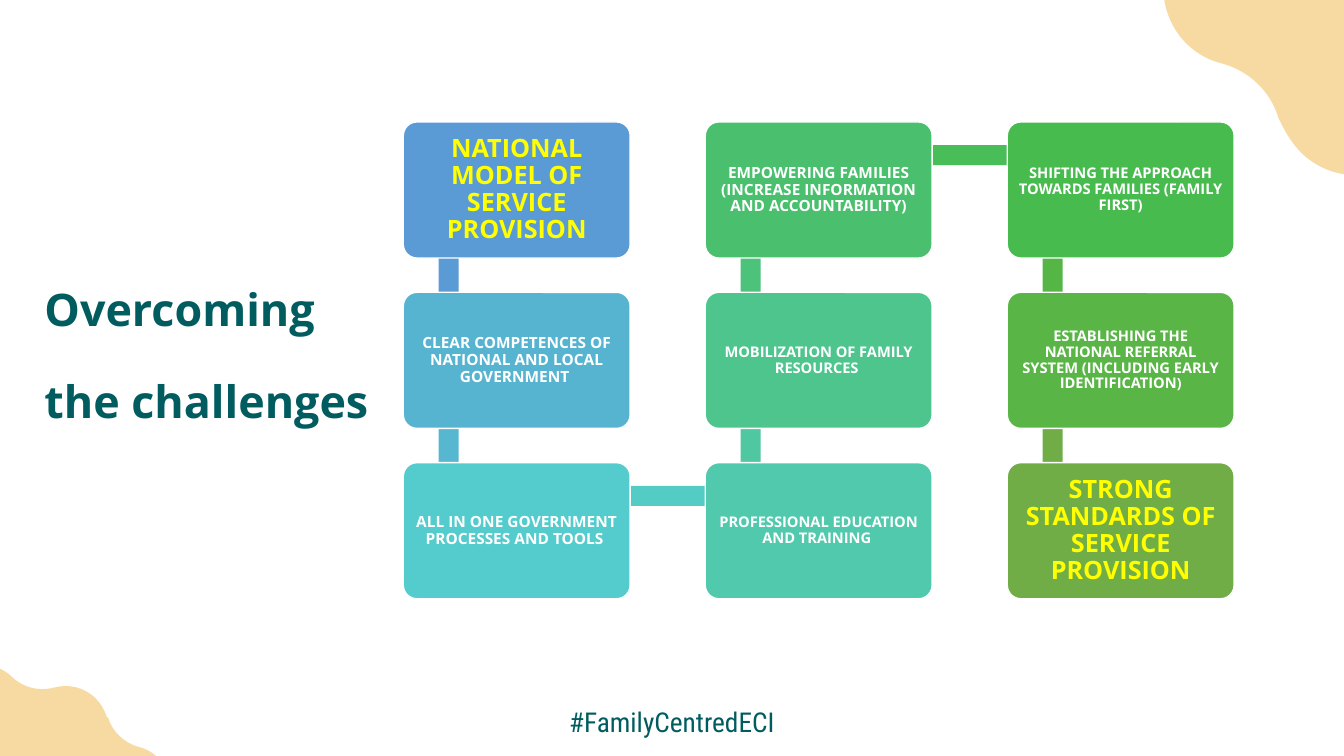
from lxml import etree
from pptx import Presentation
from pptx.dml.color import RGBColor
from pptx.enum.shapes import MSO_SHAPE
from pptx.enum.text import MSO_ANCHOR, PP_ALIGN
from pptx.oxml.ns import qn
from pptx.util import Inches, Pt

RECTANGLE = MSO_SHAPE.RECTANGLE
ROUNDED_RECTANGLE = MSO_SHAPE.ROUNDED_RECTANGLE
MIDDLE = MSO_ANCHOR.MIDDLE
LEFT = PP_ALIGN.LEFT
CENTER = PP_ALIGN.CENTER

COLORS = {"teal": "015C60", "sand": "F0B238", "white": "FFFFFF", "yellow": "FFFF00"}
HEADING_FONT = "Open Sans"
HASHTAG_FONT = "Roboto Condensed"

ROWS = 3
COLUMNS = 3
CARD_WIDTH = 2.25
CARD_HEIGHT = 1.35
BAR_THICKNESS = 0.2

STEPS = [
    ([("NATIONAL MODEL OF SERVICE PROVISION", 18)], "yellow", "5B9BD5", "5B9BD5"),
    ([("CLEAR COMPETENCES OF NATIONAL AND LOCAL GOVERNMENT ", 11)], "white", "57B4D1", "57B7D1"),
    ([("ALL IN ONE GOVERNMENT PROCESSES AND TOOLS ", 11)], "white", "54CCCD", "53CCC5"),
    ([("PROFESSIONAL EDUCATION AND TRAINING ", 10.5)], "white", "51C9AD", "4FC7A0"),
    ([("MOBILIZATION OF FAMILY RESOURCES ", 10.5)], "white", "4DC58D", "4CC27B"),
    ([("EMPOWERING FAMILIES (INCREASE INFORMATION AND ACCOUNTABILITY)", 11)],
     "white", "4AC06E", "48BD58"),
    ([("SHIFTING THE APPROACH TOWARDS FAMILIES (FAMILY FIRST)", 10.5)],
     "white", "48BB4F", "55B646"),
    ([("ESTABLISHING THE NATIONAL REFERRAL SYSTEM (INCLUDING EARLY IDENTIFICATION", 10.5),
      (")", 10)], "white", "59B546", "70AD47"),
    ([("STRONG STANDARDS OF SERVICE PROVISION", 18)], "yellow", "70AD47", None),
]

BLOB_SPAN = 7.57
BLOB_START = (2.2, -2.83)
BLOB_HALF = [
    ((2.16, -2.96), (2.09, -3.08), (1.99, -3.18)),
    ((1.78, -3.38), (1.5, -3.44), (1.24, -3.37)),
    ((0.98, -3.3), (0.69, -3.36), (0.48, -3.56)),
    ((0.18, -3.86), (-0.32, -3.85), (-0.61, -3.54)),
    ((-0.8, -3.35), (-1.08, -3.26), (-1.36, -3.33)),
    ((-1.49, -3.36), (-1.63, -3.36), (-1.76, -3.32)),
    ((-2.04, -3.25), (-2.24, -3.03), (-2.3, -2.77)),
    ((-2.37, -2.51), (-2.57, -2.29), (-2.85, -2.21)),
    ((-3.26, -2.09), (-3.5, -1.66), (-3.38, -1.25)),
    ((-3.31, -0.99), (-3.37, -0.71), (-3.56, -0.5)),
    ((-3.66, -0.4), (-3.73, -0.28), (-3.76, -0.14)),
    ((-3.83, 0.13), (-3.74, 0.42), (-3.55, 0.6)),
    ((-3.36, 0.79), (-3.27, 1.07), (-3.34, 1.35)),
    ((-3.44, 1.77), (-3.19, 2.19), (-2.78, 2.29)),
    ((-2.52, 2.36), (-2.3, 2.56), (-2.22, 2.83)),
]


def color(value):
    """Return the colour for a palette name or a hex string."""
    return RGBColor.from_string(COLORS.get(value, value))


def fill_shape(shape, fill):
    """Give a shape a plain fill without line or shadow."""
    shape.shadow.inherit = False
    shape.fill.solid()
    shape.fill.fore_color.rgb = color(fill)
    shape.line.fill.background()


def write_text(shape, runs, font, text_color, bold, alignment, spacing, inset=0):
    """Write one paragraph of (text, size) runs into a shape."""
    frame = shape.text_frame
    frame.word_wrap = True
    frame.margin_left = frame.margin_right = Inches(inset)
    frame.margin_top = frame.margin_bottom = Inches(inset)
    paragraph = frame.paragraphs[0]
    paragraph.alignment = alignment
    paragraph.line_spacing = spacing
    for text, size in runs:
        run = paragraph.add_run()
        run.text = text
        run.font.name = font
        run.font.size = Pt(size)
        run.font.bold = bold
        run.font.color.rgb = color(text_color)


def add_label(slide, box, text, size, font, bold, alignment, spacing):
    """Add a teal line of text in the given box."""
    label = slide.shapes.add_textbox(*map(Inches, box))
    write_text(label, [(text, size)], font, "teal", bold, alignment, spacing)


def add_blob(slide, center_x, center_y, span):
    """Add a translucent wavy blob whose second half mirrors the first through its centre."""
    scale = span / BLOB_SPAN

    def place(x, y):
        """Return the slide position of a point of the outline."""
        return Inches(center_x + scale * x), Inches(center_y + scale * y)

    curves = [[place(sign * x, sign * y) for x, y in curve]
              for sign in (1, -1) for curve in BLOB_HALF]
    builder = slide.shapes.build_freeform(*place(*BLOB_START), scale=1.0)
    builder.add_line_segments([curve[-1] for curve in curves], close=True)
    blob = builder.convert_to_shape()
    for segment, curve in zip(list(blob._element.iter(qn("a:lnTo"))), curves):
        segment.tag = qn("a:cubicBezTo")
        segment.remove(segment[0])
        for x, y in curve:
            etree.SubElement(segment, qn("a:pt"), x=str(x - blob.left), y=str(y - blob.top))
    fill_shape(blob, "sand")
    fill_color = next(blob._element.iter(qn("a:srgbClr")))
    etree.SubElement(fill_color, qn("a:alpha"), val="47000")


def add_bar(slide, here, there, fill):
    """Join two neighbouring cards, given their top left corners, with a bar."""
    left, top = min(here[0], there[0]), min(here[1], there[1])
    if here[0] == there[0]:
        box = (left + 0.35, top + 0.34, BAR_THICKNESS, 1.68)
    else:
        box = (left + 0.46, top + 0.23, 2.98, BAR_THICKNESS)
    fill_shape(slide.shapes.add_shape(RECTANGLE, *map(Inches, box)), fill)


def add_card(slide, corner, runs, text_color, fill):
    """Add one rounded card with its text."""
    card = slide.shapes.add_shape(
        ROUNDED_RECTANGLE, *map(Inches, (*corner, CARD_WIDTH, CARD_HEIGHT)))
    card.adjustments[0] = 0.1
    fill_shape(card, fill)
    card.line.color.rgb = color("white")
    card.line.width = Pt(1)
    card.text_frame.vertical_anchor = MIDDLE
    inset = 0.07 if runs[0][1] == 18 else 0.05
    write_text(card, runs, HEADING_FONT, text_color, True, CENTER, 0.9, inset)


def add_process(slide, left, top, width, height):
    """Lay the steps out as a snake running down and up the columns of the box."""
    column_pitch = (width - CARD_WIDTH) / (COLUMNS - 1)
    row_pitch = (height - CARD_HEIGHT) / (ROWS - 1)
    corners = []
    for index in range(len(STEPS)):
        column, row = divmod(index, ROWS)
        if column % 2:
            row = ROWS - 1 - row
        corners.append((left + column * column_pitch, top + row * row_pitch))
    for index, (runs, text_color, fill, bar_fill) in enumerate(STEPS):
        if bar_fill:
            add_bar(slide, corners[index], corners[index + 1], bar_fill)
        add_card(slide, corners[index], runs, text_color, fill)


def main():
    """Build the slide and save it."""
    presentation = Presentation()
    presentation.slide_width = Inches(13.33)
    presentation.slide_height = Inches(7.5)
    slide = presentation.slides.add_slide(presentation.slide_layouts[6])
    add_label(slide, (5.43, 6.94, 2.47, 0.35), "#FamilyCentredECI", 19.5,
              HASHTAG_FONT, False, CENTER, Pt(27.4))
    add_label(slide, (0.44, 2.42, 3.28, 1.7), "Overcoming the challenges", 32,
              HEADING_FONT, True, LEFT, Pt(65.5))
    add_blob(slide, 14.9, -1.66, 7.57)
    add_blob(slide, -0.14, 8.66, 4.13)
    add_process(slide, 4, 1.21, 8.24, 4.73)
    presentation.save("out.pptx")


if __name__ == "__main__":
    main()
